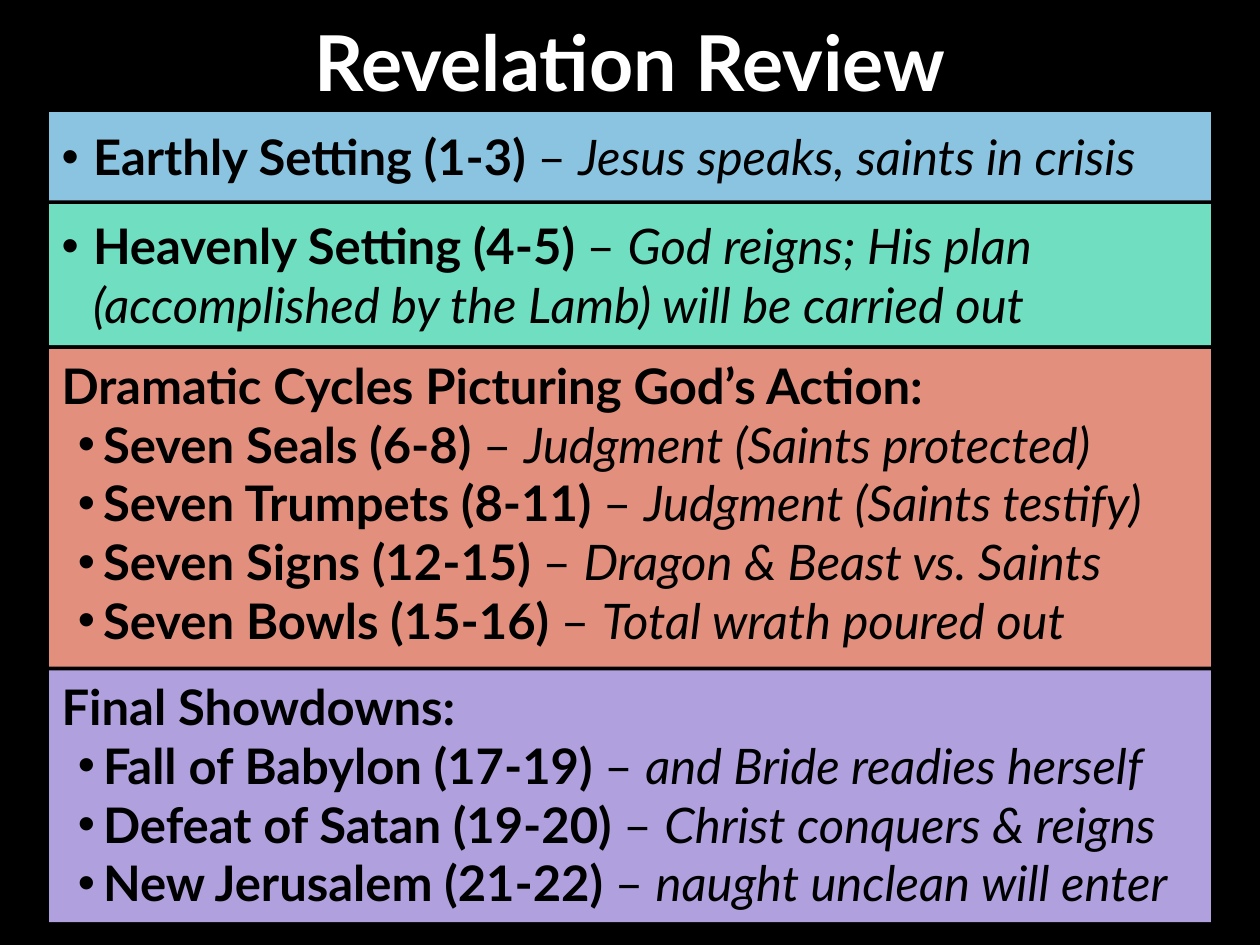
from pptx import Presentation
from pptx import util as u
from pptx.dml import color
from pptx.enum import shapes, text
from pptx.oxml import xmlchemy
from pptx.oxml import ns
from lxml import etree

COLORS = {
    "background": "000000",
    "title": "FFFFFF",
    "ink": "000000",
    "earth": "8BC4E0",
    "heaven": "70DEC1",
    "cycles": "E28F7D",
    "finale": "B0A0DD",
}
FONT = "Lato"
GAP = 0.03

SECTIONS = [
    {"color": "earth", "height": 0.7, "heading": None, "points": [
        ("Earthly Setting (1-3)", "Jesus speaks, saints in crisis")]},
    {"color": "heaven", "height": 1.12, "heading": None, "points": [
        ("Heavenly Setting (4-5)",
         "God reigns; His plan (accomplished by the Lamb) will be carried out")]},
    {"color": "cycles", "height": 2.52,
     "heading": "Dramatic Cycles Picturing God’s Action:", "points": [
         ("Seven Seals (6-8)", "Judgment (Saints protected)"),
         ("Seven Trumpets (8-11)", "Judgment (Saints testify)"),
         ("Seven Signs (12-15)", "Dragon & Beast vs. Saints"),
         ("Seven Bowls (15-16)", "Total wrath poured out")]},
    {"color": "finale", "height": 2.0, "heading": "Final Showdowns:", "points": [
        ("Fall of Babylon (17-19)", "and Bride readies herself"),
        ("Defeat of Satan (19-20)", "Christ conquers & reigns"),
        ("New Jerusalem (21-22)", "naught unclean will enter")]},
]


def rgb(name):
    """Return the palette colour of that name."""
    return color.RGBColor.from_string(COLORS[name])


def set_all(target, values):
    """Set each attribute in values on the target."""
    for name, value in values.items():
        setattr(target, name, value)


def add_words(paragraph, words, ink="ink", size=28, bold=False, italic=False):
    """Append one formatted run to a paragraph."""
    run = paragraph.add_run()
    run.text = words
    set_all(run.font, {"name": FONT, "size": u.Pt(size), "bold": bold, "italic": italic})
    run.font.color.rgb = rgb(ink)


def add_bullet(paragraph, margin, hanging):
    """Give a paragraph a round bullet with a hanging indent."""
    properties = paragraph._p.get_or_add_pPr()
    properties.set("marL", str(u.Inches(margin)))
    properties.set("indent", str(-u.Inches(hanging)))
    etree.SubElement(properties, ns.qn("a:buFont")).set("typeface", "Arial")
    etree.SubElement(properties, ns.qn("a:buChar")).set("char", "•")


def place_title(slide, left, top, width, height):
    """Place and format the title in its box."""
    title = slide.shapes.title
    set_all(title, {"left": u.Inches(left), "top": u.Inches(top),
                    "width": u.Inches(width), "height": u.Inches(height)})
    set_all(title.text_frame, {"word_wrap": True,
                               "vertical_anchor": text.MSO_ANCHOR.MIDDLE})
    line = title.text_frame.paragraphs[0]
    set_all(line, {"alignment": text.PP_ALIGN.CENTER, "line_spacing": 0.9})
    add_words(line, "Revelation Review", ink="title", size=44, bold=True)


def place_section(slide, section, left, top, width, height):
    """Draw one coloured band with its heading and points."""
    band = slide.shapes.add_shape(
        shapes.MSO_SHAPE.RECTANGLE,
        u.Inches(left), u.Inches(top), u.Inches(width), u.Inches(height))
    band.shadow.inherit = False
    band.fill.solid()
    band.fill.fore_color.rgb = rgb(section["color"])
    band.line.fill.background()

    heading = section["heading"]
    anchor = text.MSO_ANCHOR.TOP if heading else text.MSO_ANCHOR.MIDDLE
    margin, hanging = (0.33, 0.2) if heading else (0.25, 0.25)
    frame = band.text_frame
    set_all(frame, {"word_wrap": True, "vertical_anchor": anchor})

    line = frame.paragraphs[0]
    line.alignment = text.PP_ALIGN.LEFT
    if heading:
        add_words(line, heading, bold=True)
    for index, (passage, summary) in enumerate(section["points"]):
        if heading or index:
            line = frame.add_paragraph()
            line.alignment = text.PP_ALIGN.LEFT
        add_bullet(line, margin, hanging)
        add_words(line, f"{passage} ", bold=True)
        add_words(line, "– ")
        add_words(line, summary, italic=True)


def place_review(slide, left, top, width):
    """Stack the sections downwards with equal gaps."""
    for section in SECTIONS:
        place_section(slide, section, left, top, width, section["height"])
        top += section["height"] + GAP


def main():
    """Build and save the slide."""
    deck = Presentation()
    set_all(deck, {"slide_width": u.Inches(10), "slide_height": u.Inches(7.5)})
    slide = deck.slides.add_slide(deck.slide_layouts[5])
    slide.background.fill.solid()
    slide.background.fill.fore_color.rgb = rgb("background")
    place_review(slide, 0.39, 0.89, 9.22)
    place_title(slide, 0.69, 0.08, 8.62, 0.89)
    deck.save("out.pptx")


if __name__ == "__main__":
    main()
